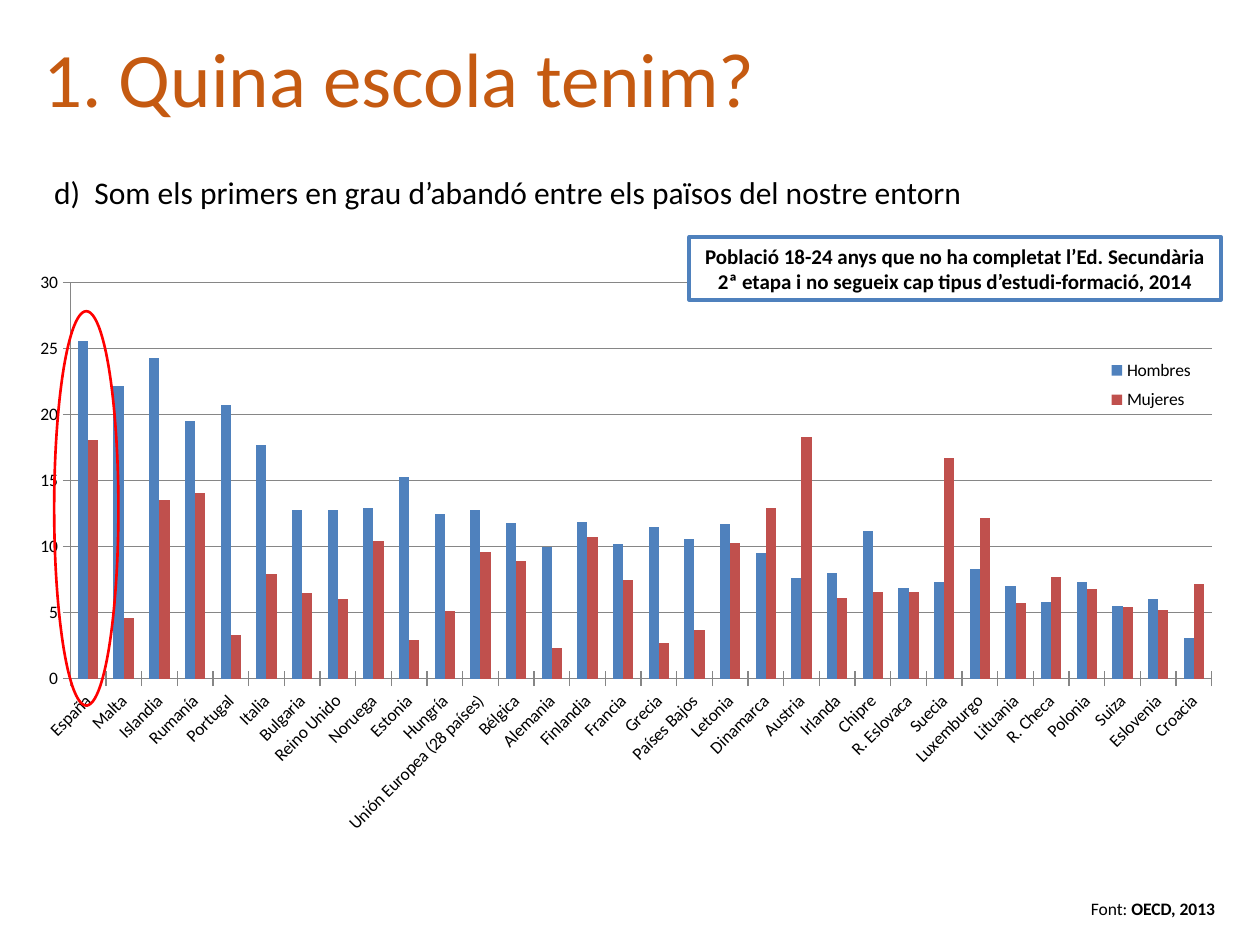
from lxml import etree
from pptx import Presentation
from pptx.chart.data import CategoryChartData
from pptx.dml.color import RGBColor
from pptx.enum.chart import XL_CHART_TYPE, XL_LEGEND_POSITION, XL_TICK_MARK
from pptx.enum.shapes import MSO_SHAPE
from pptx.enum.text import MSO_ANCHOR, MSO_AUTO_SIZE, PP_ALIGN
from pptx.oxml.ns import qn
from pptx.util import Inches, Pt

CLUSTERED = XL_CHART_TYPE.COLUMN_CLUSTERED
LEGEND_RIGHT = XL_LEGEND_POSITION.RIGHT
TICK_CROSS = XL_TICK_MARK.CROSS
RECTANGLE, OVAL = MSO_SHAPE.RECTANGLE, MSO_SHAPE.OVAL
MIDDLE, TOP = MSO_ANCHOR.MIDDLE, MSO_ANCHOR.TOP
NO_AUTOFIT = MSO_AUTO_SIZE.NONE
LEFT, CENTER = PP_ALIGN.LEFT, PP_ALIGN.CENTER

BLACK = RGBColor(0x00, 0x00, 0x00)
WHITE = RGBColor(0xFF, 0xFF, 0xFF)
ORANGE = RGBColor(0xC5, 0x5A, 0x11)
BLUE = RGBColor(0x4F, 0x81, 0xBD)
BRICK = RGBColor(0xC0, 0x50, 0x4D)
RED = RGBColor(0xFF, 0x00, 0x00)
GRAY = RGBColor(0x86, 0x86, 0x86)
FONT = "Calibri"

# Country, men, women
DROPOUT = [
    ("España", 25.6, 18.1), ("Malta", 22.2, 4.6), ("Islandia", 24.3, 13.5),
    ("Rumanía", 19.5, 14.1), ("Portugal", 20.7, 3.3), ("Italia", 17.7, 7.9),
    ("Bulgaria", 12.8, 6.5), ("Reino Unido", 12.8, 6), ("Noruega", 12.9, 10.4),
    ("Estonia", 15.3, 2.9), ("Hungría", 12.5, 5.1),
    ("Unión Europea (28 países)", 12.8, 9.6), ("Bélgica", 11.8, 8.9),
    ("Alemania", 10, 2.3), ("Finlandia", 11.9, 10.7), ("Francia", 10.2, 7.5),
    ("Grecia", 11.5, 2.7), ("Países Bajos", 10.6, 3.7), ("Letonia", 11.7, 10.3),
    ("Dinamarca", 9.5, 12.9), ("Austria", 7.6, 18.3), ("Irlanda", 8, 6.1),
    ("Chipre", 11.2, 6.6), ("R. Eslovaca", 6.9, 6.6), ("Suecia", 7.3, 16.7),
    ("Luxemburgo", 8.3, 12.2), ("Lituania", 7, 5.7), ("R. Checa", 5.8, 7.7),
    ("Polonia", 7.3, 6.8), ("Suiza", 5.5, 5.4), ("Eslovenia", 6, 5.2),
    ("Croacia", 3.1, 7.2),
]


def apply(target, values):
    for name, value in values.items():
        setattr(target, name, value)


def format_font(font, size, color=BLACK, bold=False):
    apply(font, {"name": FONT, "size": Pt(size), "bold": bold})
    font.color.rgb = color


def place(part, box):
    apply(part, dict(zip(("left", "top", "width", "height"), box)))


def write(frame, runs, size, color=BLACK, align=LEFT, anchor=TOP):
    apply(frame, {"word_wrap": True, "auto_size": NO_AUTOFIT,
                  "vertical_anchor": anchor})
    paragraph = frame.paragraphs[0]
    apply(paragraph, {"alignment": align, "space_before": Pt(0)})
    for text, bold in runs:
        run = paragraph.add_run()
        run.text = text
        format_font(run.font, size, color, bold)
    return paragraph


def add_title(slide, box):
    title = slide.shapes.title
    place(title, box)
    write(title.text_frame, [("1. Quina escola tenim?", False)], 44, ORANGE,
          CENTER, MIDDLE)


def add_statement(slide, box):
    statement = slide.placeholders[1]
    place(statement, box)
    text = "d)  Som els primers en grau d’abandó entre els països del nostre entorn"
    properties = write(statement.text_frame, [(text, False)], 18)._p.get_or_add_pPr()
    properties.set("marL", "0")
    properties.set("indent", "0")
    etree.SubElement(properties, qn("a:buNone"))


def set_layout(part, x, y, w, h, inner=False):
    """Give a plot area or legend a manual place, as fractions of the chart."""
    for old in part.findall(qn("c:layout")):
        part.remove(old)
    layout = etree.Element(qn("c:layout"))
    manual = etree.SubElement(layout, qn("c:manualLayout"))
    settings = [("layoutTarget", "inner")] if inner else []
    settings += [("xMode", "edge"), ("yMode", "edge"),
                 ("x", x), ("y", y), ("w", w), ("h", h)]
    for tag, value in settings:
        etree.SubElement(manual, qn(f"c:{tag}")).set("val", str(value))
    position = part.find(qn("c:legendPos"))
    if position is None:
        part.insert(0, layout)
    else:
        position.addnext(layout)


def add_dropout_chart(slide, box):
    countries, men, women = zip(*DROPOUT)
    data = CategoryChartData()
    data.categories = countries
    data.add_series("Hombres", men)
    data.add_series("Mujeres", women)
    chart = slide.shapes.add_chart(CLUSTERED, *box, data).chart
    chart.has_title = False
    format_font(chart.font, 10)

    # Bars
    plot = chart.plots[0]
    apply(plot, {"gap_width": 150, "overlap": 0, "vary_by_categories": False})
    for series, color in zip(plot.series, (BLUE, BRICK)):
        series.format.fill.solid()
        series.format.fill.fore_color.rgb = color
        series.invert_if_negative = False

    # Axes
    values, names = chart.value_axis, chart.category_axis
    apply(values, {"minimum_scale": 0, "maximum_scale": 30, "major_unit": 5,
                   "has_major_gridlines": True})
    for axis in (values, names):
        axis.major_tick_mark = TICK_CROSS
        format_font(axis.tick_labels.font, 10)
    for line in (values.format.line, names.format.line,
                 values.major_gridlines.format.line):
        line.color.rgb = GRAY
        line.width = Pt(0.75)
    names_body = names._element.find(qn("c:txPr")).find(qn("a:bodyPr"))
    names_body.set("rot", "-2700000")
    names_body.set("vert", "horz")

    # Legend
    chart.has_legend = True
    legend = chart.legend
    apply(legend, {"position": LEGEND_RIGHT, "include_in_layout": False})
    format_font(legend.font, 10)
    set_layout(legend._element, 0.88, 0.13, 0.09, 0.11)
    set_layout(plot._element.getparent(), 0.036, 0.021, 0.939, 0.635, inner=True)


def add_outline(slide, kind, box, color, width):
    shape = slide.shapes.add_shape(kind, *box)
    shape.shadow.inherit = False
    shape.fill.background()
    shape.line.color.rgb = color
    shape.line.width = Pt(width)
    return shape


def add_caption(slide, box):
    caption = add_outline(slide, RECTANGLE, box, BLUE, 2)
    caption.fill.solid()
    caption.fill.fore_color.rgb = WHITE
    text = ("Població 18-24 anys que no ha completat l’Ed. Secundària "
            "2ª etapa i no segueix cap tipus d’estudi-formació, 2014")
    write(caption.text_frame, [(text, True)], 12, align=CENTER, anchor=MIDDLE)


def add_source(slide, box):
    source = slide.shapes.add_textbox(*box)
    write(source.text_frame, [("Font: ", False), ("OECD, 2013", True)], 10)


def inches(*lengths):
    return [Inches(length) for length in lengths]


def main():
    deck = Presentation()
    deck.slide_width, deck.slide_height = inches(10, 7.5)
    slide = deck.slides.add_slide(deck.slide_layouts[1])
    add_title(slide, inches(0.08, 0, 6.18, 1.22))
    add_statement(slide, inches(0.33, 1.32, 9.12, 4.04))
    add_dropout_chart(slide, inches(0.21, 2.14, 9.65, 4.95))
    add_caption(slide, inches(5.47, 1.88, 4.22, 0.5))
    add_source(slide, inches(8.56, 7.08, 1.44, 0.27))
    # Highlight around España
    add_outline(slide, OVAL, inches(0.43, 2.47, 0.51, 3.13), RED, 1.5)
    deck.save("out.pptx")


if __name__ == "__main__":
    main()
